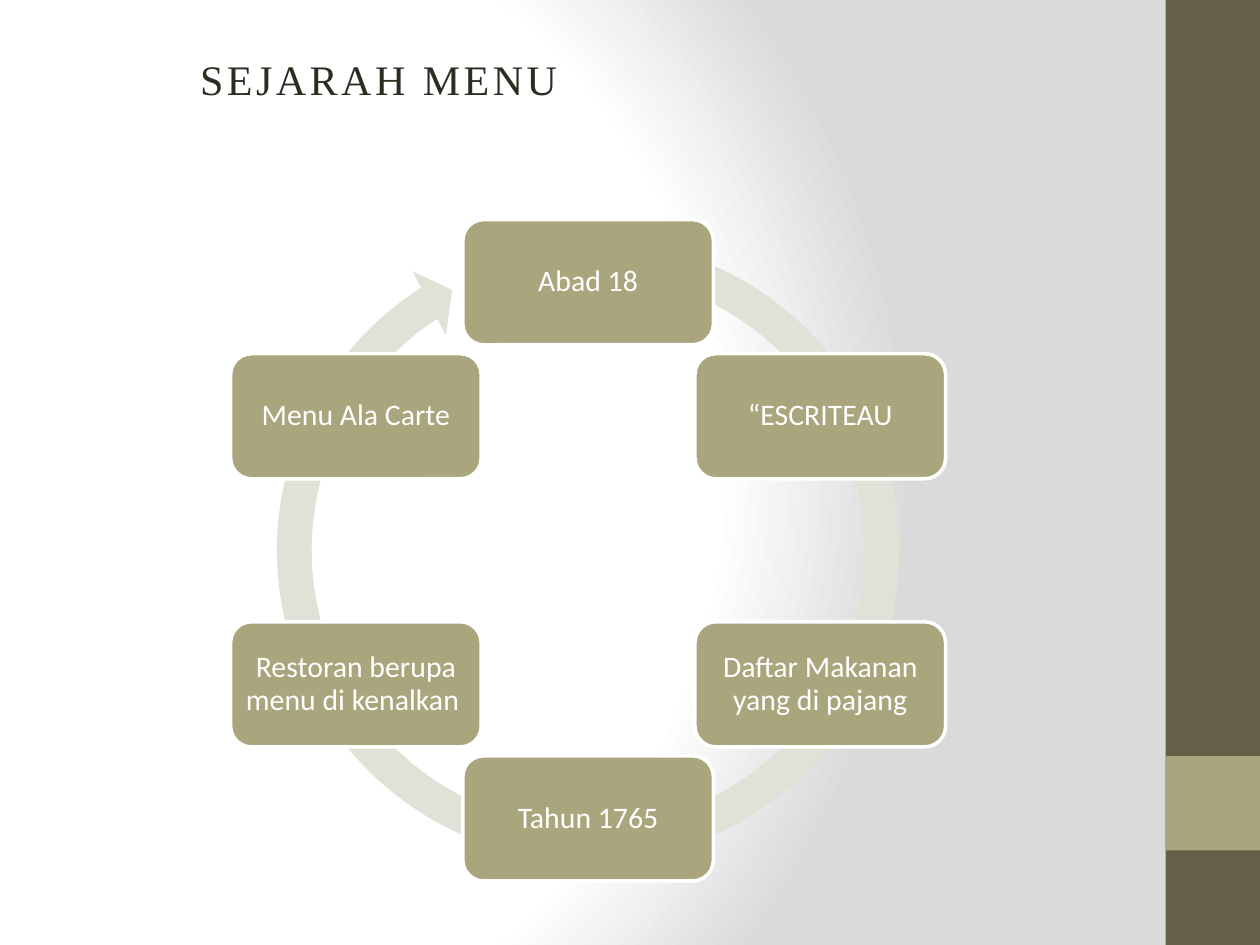
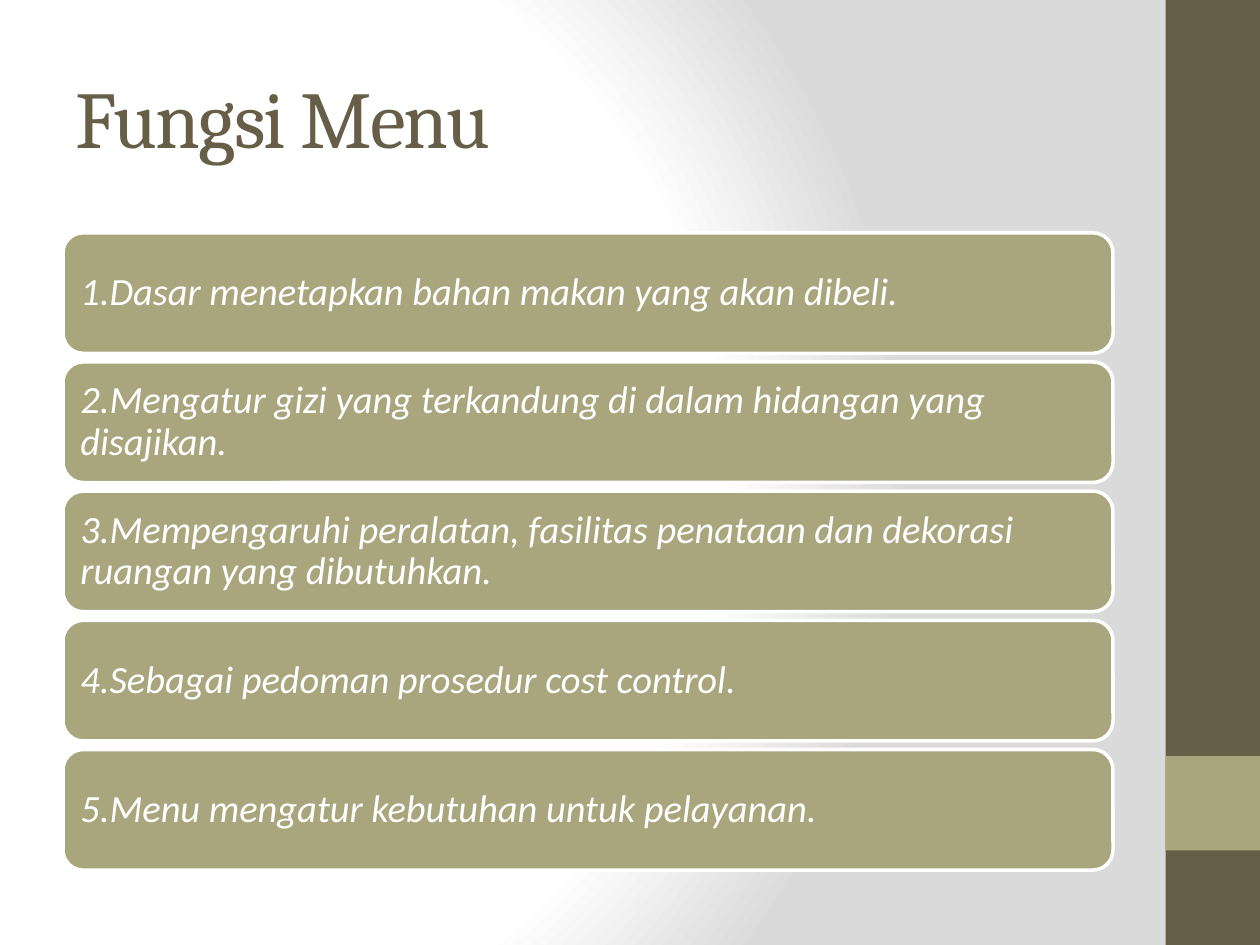
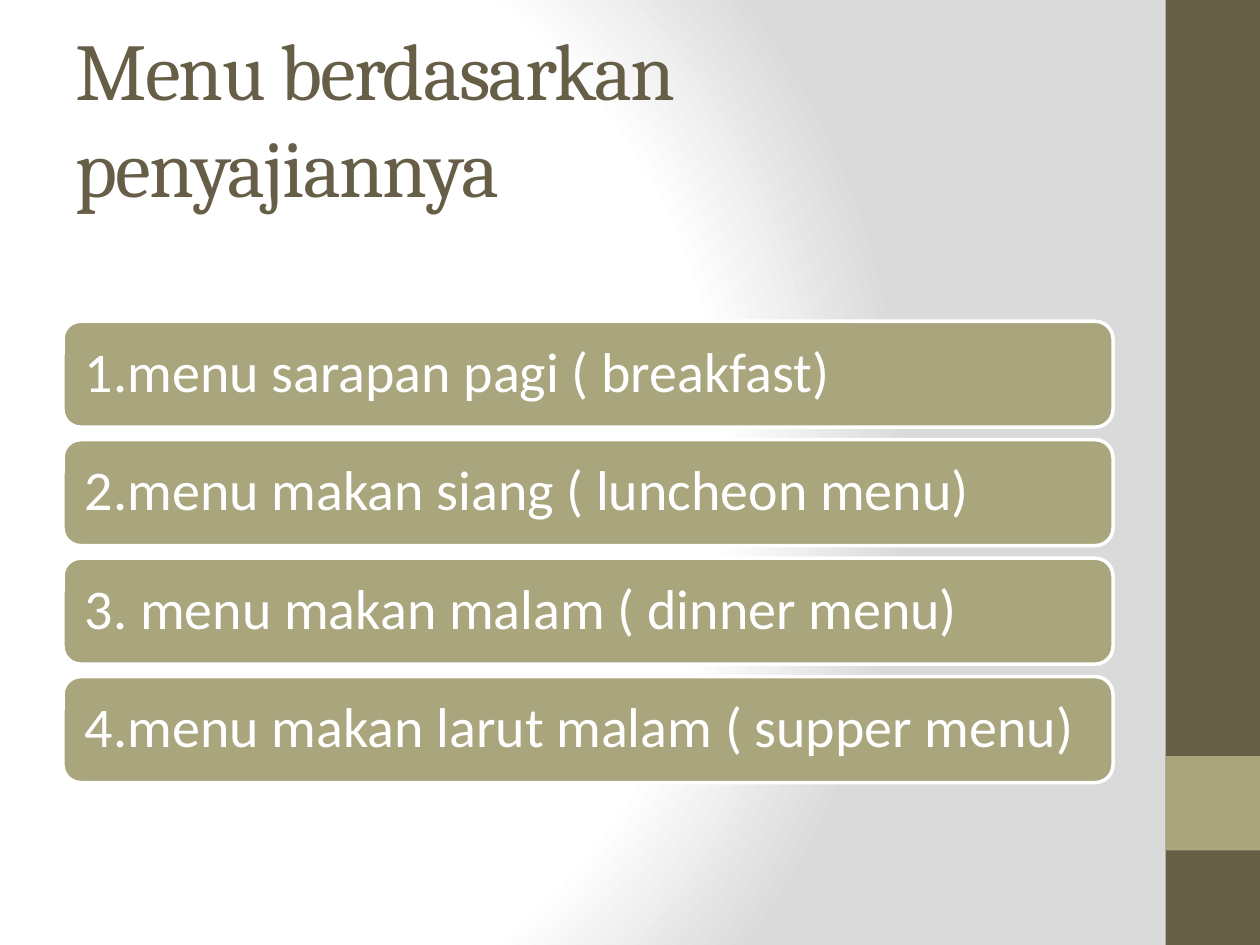
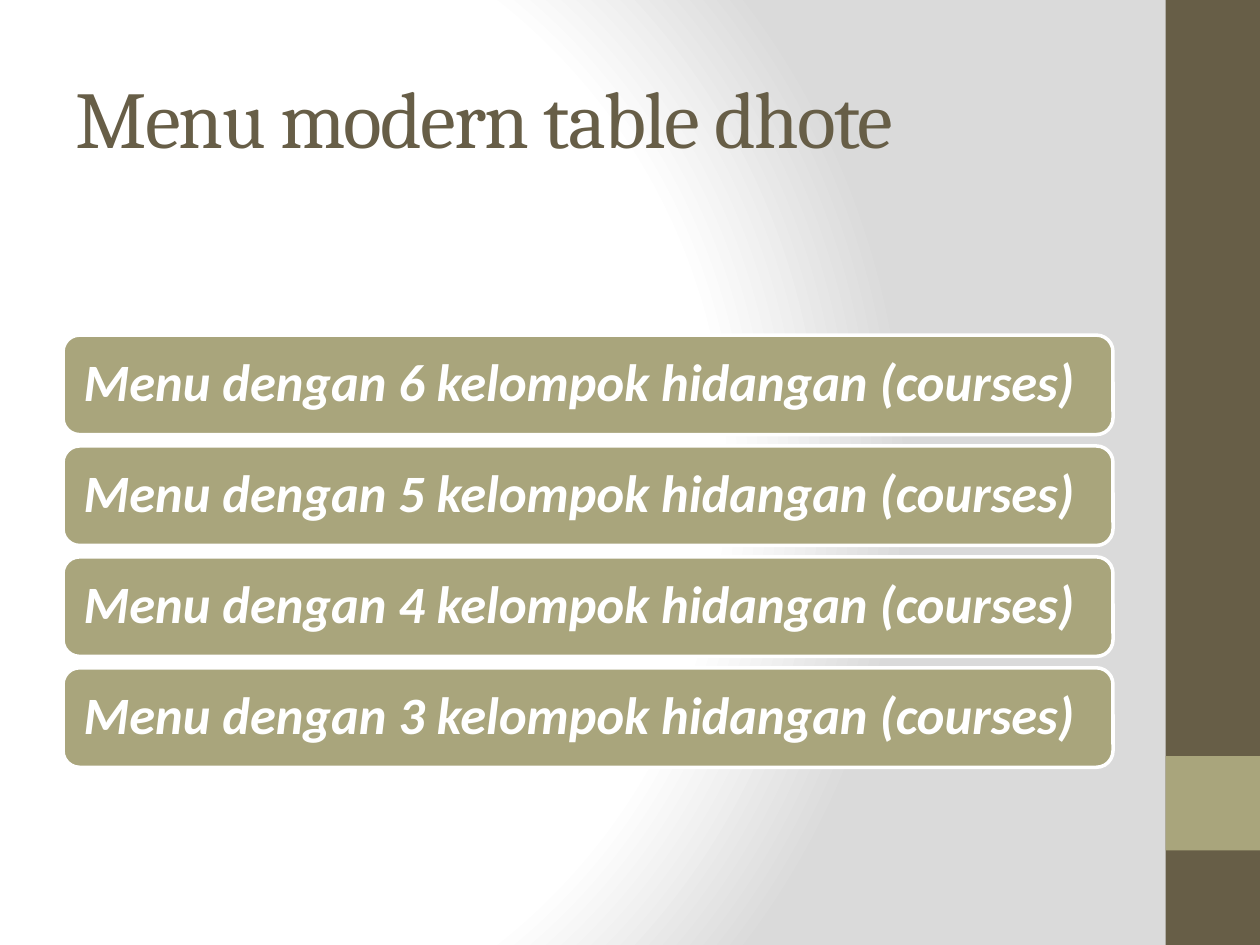
from math import cos, radians, sin

from pptx import Presentation
from pptx.dml.color import RGBColor
from pptx.enum.shapes import MSO_SHAPE
from pptx.enum.text import MSO_ANCHOR, MSO_AUTO_SIZE, PP_ALIGN
from pptx.oxml import parse_xml
from pptx.oxml.ns import nsdecls, qn
from pptx.util import Pt

RECT = MSO_SHAPE.RECTANGLE
ROUND = MSO_SHAPE.ROUNDED_RECTANGLE
RING = MSO_SHAPE.CIRCULAR_ARROW
LEFT, CENTER = PP_ALIGN.LEFT, PP_ALIGN.CENTER
TOP, MIDDLE = MSO_ANCHOR.TOP, MSO_ANCHOR.MIDDLE
NO_FIT = MSO_AUTO_SIZE.NONE

WHITE = RGBColor(0xFF, 0xFF, 0xFF)
GREY = RGBColor(0xDA, 0xDA, 0xDA)
BROWN = RGBColor(0x67, 0x5E, 0x47)
OLIVE = RGBColor(0xA9, 0xA5, 0x7C)
PALE = RGBColor(0xE2, 0xE1, 0xD7)
DARK = RGBColor(0x2F, 0x2B, 0x20)

WIDE, HIGH = 720, 540
BAND = (666, 0, 54, 540)
HEAD = (36, 21.6, 600, 90)
SMALL_HEAD = (84.24, 30.24, 264.24, 59.76)
WHEEL = (147.6, 126, 377, 377)
NODE = (143.2, 71.5)
ORBIT = 153.2
ARROW = (0.05274, 3.126, 142.346, 171.232, 0.05477)

STEPS = [
    "Abad 18",
    "“ESCRITEAU",
    "Daftar Makanan yang di pajang",
    "Tahun 1765",
    "Restoran berupa menu di kenalkan ",
    "Menu Ala Carte",
]
ROLES = [
    "1.Dasar menetapkan bahan makan yang akan dibeli.",
    "2.Mengatur gizi yang terkandung di dalam hidangan yang disajikan.",
    "3.Mempengaruhi peralatan, fasilitas penataan dan dekorasi ruangan yang dibutuhkan.",
    "4.Sebagai pedoman prosedur cost control.",
    "5.Menu mengatur kebutuhan untuk pelayanan.",
]
MEALS = [
    "1.menu sarapan pagi ( breakfast)",
    "2.menu makan siang ( luncheon menu)",
    "3. menu makan malam ( dinner menu)",
    "4.menu makan larut malam ( supper menu)",
]
SETS = [f"Menu dengan {count} kelompok hidangan (courses)" for count in (6, 5, 4, 3)]


def add_form(slide, kind, box, fill):
    form = slide.shapes.add_shape(kind, *map(Pt, box))
    form.shadow.inherit = False
    form.fill.solid()
    form.fill.fore_color.rgb = fill
    form.line.fill.background()
    return form


def style(para, face, size, color, align, bold=False, slant=False):
    para.alignment = align
    for run in para.runs:
        font = run.font
        font.name, font.size = face, Pt(size)
        font.bold, font.italic = bold, slant
        font.color.rgb = color


def add_card(slide, box, text, size, align=LEFT, **looks):
    card = add_form(slide, ROUND, box, OLIVE)
    card.line.color.rgb = WHITE
    card.line.width = Pt(2)
    frame = card.text_frame
    frame.word_wrap = True
    frame.vertical_anchor = MIDDLE
    inset = Pt(0.3 * size)
    frame.margin_left = frame.margin_right = inset
    frame.margin_top = frame.margin_bottom = inset
    frame.text = text
    para = frame.paragraphs[0]
    para.line_spacing = 0.9
    para.space_after = Pt(0.35 * size)
    style(para, "Calibri", size, WHITE, align, **looks)


def set_title(slide, text, box=HEAD, face="Cambria", size=46, color=BROWN,
              align=LEFT, anchor=MIDDLE, track=-1):
    title = slide.shapes.title
    title.left, title.top, title.width, title.height = map(Pt, box)
    frame = title.text_frame
    frame.text = text
    frame.word_wrap = True
    frame.auto_size = NO_FIT
    frame.vertical_anchor = anchor
    para = frame.paragraphs[0]
    style(para, face, size, color, align)
    for props in title.element.iter(qn("a:rPr")):
        props.set("spc", str(track * 100))
    return para


def set_back(master):
    master.background.fill.solid()
    back = master.element.find(".//" + qn("p:bgPr"))
    stops = "".join(
        f'<a:gs pos="{place * 1000}"><a:srgbClr val="{color}"/></a:gs>'
        for place, color in ((0, WHITE), (75, WHITE), (100, GREY))
    )
    back.replace(back[0], parse_xml(
        f'<a:gradFill {nsdecls("a")} rotWithShape="1"><a:gsLst>{stops}</a:gsLst>'
        '<a:path path="circle"><a:fillToRect l="20000" t="50000" r="100000" b="50000"/>'
        '</a:path></a:gradFill>'
    ))


def set_bands(master, slide, box):
    left, top, width, height = box
    block = (left, top + 0.8 * height, width, width)
    for spot, (part, fill) in enumerate(((box, BROWN), (block, OLIVE))):
        band = add_form(slide, RECT, part, fill)
        master.shapes.element.insert(2 + spot, band.element)


def add_wheel(slide, box, steps):
    left, top, width, height = box
    ring = add_form(slide, RING, box, PALE)
    for spot, value in enumerate(ARROW):
        ring.adjustments[spot] = value
    wide, high = NODE
    for spot, step in enumerate(steps):
        angle = radians(360 / len(steps) * spot)
        mid_x = left + width / 2 + ORBIT * sin(angle)
        mid_y = top + height / 2 - ORBIT * cos(angle)
        part = (mid_x - wide / 2, mid_y - high / 2, wide, high)
        add_card(slide, part, step, 17, CENTER)


def add_stack(slide, box, gap, lines, size, **looks):
    left, top, width, height = box
    high = (height - gap * (len(lines) - 1)) / len(lines)
    for spot, line in enumerate(lines):
        part = (left, top + spot * (high + gap), width, high)
        add_card(slide, part, line, size, **looks)


def main():
    deck = Presentation()
    deck.slide_width, deck.slide_height = Pt(WIDE), Pt(HIGH)
    layout = deck.slide_layouts.get_by_name("Title Only")
    past, role, meal, course = [deck.slides.add_slide(layout) for _ in range(4)]

    set_back(deck.slide_master)
    set_bands(deck.slide_master, past, BAND)

    head = set_title(past, "SEJARAH MENU", SMALL_HEAD, "Times New Roman", 24,
                     DARK, CENTER, TOP, 2)
    head.line_spacing = 0.9
    head.space_before, head.space_after = Pt(12), Pt(2)
    add_wheel(past, WHEEL, STEPS)

    set_title(role, "Fungsi Menu")
    add_stack(role, (36, 133, 600, 364.2), 4.9, ROLES, 22, slant=True)

    set_title(meal, "Menu berdasarkan penyajiannya")
    add_stack(meal, (36, 183.6, 600, 263.6), 7.2, MEALS, 32)

    set_title(course, "Menu modern table dhote")
    add_stack(course, (36, 191.5, 600, 247), 6.5, SETS, 30, bold=True, slant=True)

    deck.save("out.pptx")


if __name__ == "__main__":
    main()
